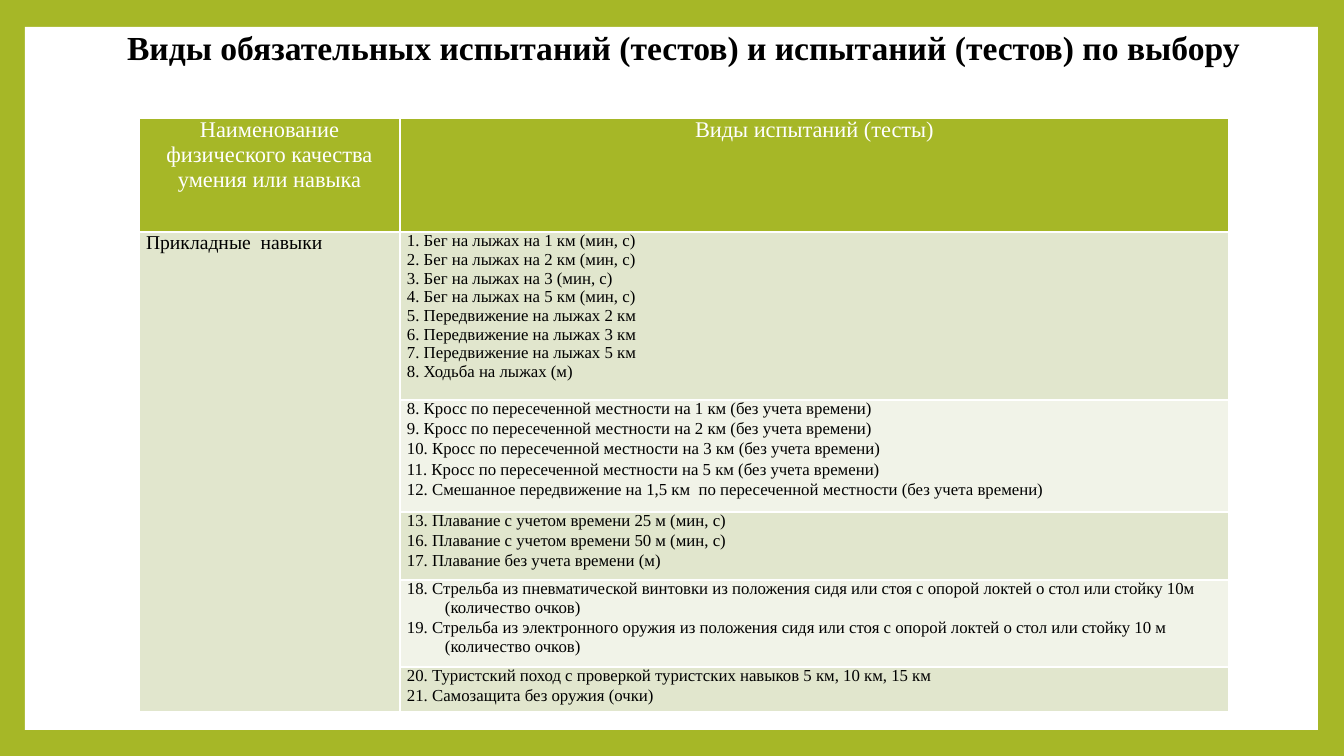
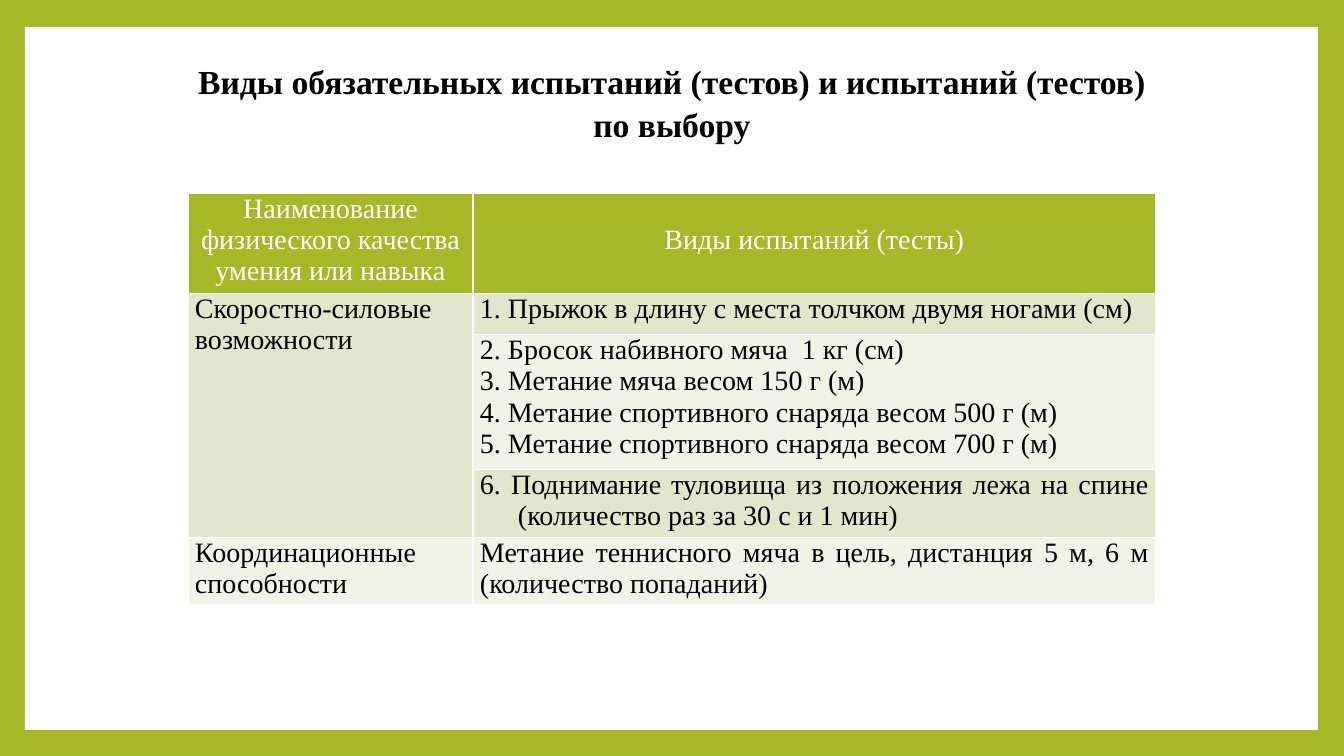
from dataclasses import dataclass

from lxml.etree import SubElement as Sub
from pptx import Presentation
from pptx.dml.color import RGBColor as Rgb
from pptx.enum.shapes import MSO_SHAPE as Kind
from pptx.enum.text import MSO_ANCHOR as Anchor, PP_ALIGN as Align
from pptx.oxml.ns import qn
from pptx.slide import Slide
from pptx.table import _Cell as Cell
from pptx.text.text import TextFrame as Frame
from pptx.util import Emu, Pt


@dataclass(frozen=True)
class Theme:
    font: str = "Times New Roman"
    green: str = "A6B727"
    white: str = "FFFFFF"
    black: str = "000000"
    bands: tuple[str, str] = ("E1E6CD", "F1F3E8")
    title: int = 24
    lead: float = 1.07
    rule: int = 1


@dataclass(frozen=True)
class Box:
    left: int
    top: int
    width: int
    height: int


@dataclass(frozen=True)
class Test:
    high: int
    lines: tuple[str, ...]
    gap: int = 0
    hang: int = 38


@dataclass(frozen=True)
class Group:
    name: str
    tests: tuple[Test, ...]


@dataclass(frozen=True)
class Sheet:
    title: Box
    left: int
    top: int
    cols: tuple[int, int]
    high: int
    drop: int
    head: int
    label: int
    body: int
    align: Align
    groups: tuple[Group, ...]


THEME = Theme()
PAGE = Box(0, 0, 1344, 756)
PANEL = Box(25, 27, 1293, 703)
PAD = 7
TITLE = "Виды обязательных испытаний (тестов) и испытаний (тестов) по выбору"
HEADS = ("Наименование физического качества умения или навыка", "Виды испытаний (тесты)")

SHEETS = (
    Sheet(
        Box(53, 21, 1261, 50), 139, 118, (261, 829), 114, 0, 16, 14, 12, Align.LEFT,
        (
            Group("Прикладные  навыки", (
                Test(168, (
                    "1. Бег на лыжах на 1 км (мин, с)",
                    "2. Бег на лыжах на 2 км (мин, с)",
                    "3. Бег на лыжах на 3 (мин, с)",
                    "4. Бег на лыжах на 5 км (мин, с)",
                    "5. Передвижение на лыжах 2 км",
                    "6. Передвижение на лыжах 3 км",
                    "7. Передвижение на лыжах 5 км",
                    "8. Ходьба на лыжах (м)",
                )),
                Test(112, (
                    "8. Кросс по пересеченной местности на 1 км (без учета времени)",
                    "9. Кросс по пересеченной местности на 2 км (без учета времени)",
                    "10. Кросс по пересеченной местности на 3 км (без учета времени)",
                    "11. Кросс по пересеченной местности на 5 км (без учета времени)",
                    "12. Смешанное передвижение на 1,5 км  по пересеченной местности "
                    "(без учета времени)",
                ), gap=1),
                Test(68, (
                    "13. Плавание с учетом времени 25 м (мин, с)",
                    "16. Плавание с учетом времени 50 м (мин, с)",
                    "17. Плавание без учета времени (м)",
                ), gap=1),
                Test(87, (
                    "18. Стрельба из пневматической винтовки из положения сидя или стоя "
                    "с опорой локтей о стол или стойку 10м (количество очков)",
                    "19. Стрельба из электронного оружия из положения сидя или стоя "
                    "с опорой локтей о стол или стойку 10 м (количество очков)",
                ), gap=1),
                Test(45, (
                    "20. Туристский поход с проверкой туристских навыков 5 км, 10 км, 15 км",
                    "21. Самозащита без оружия (очки)",
                ), gap=1),
            )),
        ),
    ),
    Sheet(
        Box(168, 55, 1008, 92), 188, 193, (285, 683), 100, 31, 20, 20, 20, Align.JUSTIFY,
        (
            Group("Скоростно-силовые возможности", (
                Test(41, ("1. Прыжок в длину с места толчком двумя ногами (см)",)),
                Test(135, (
                    "2. Бросок набивного мяча  1 кг (см)",
                    "3. Метание мяча весом 150 г (м)",
                    "4. Метание спортивного снаряда весом 500 г (м)",
                    "5. Метание спортивного снаряда весом 700 г (м)",
                )),
                Test(67, (
                    "6. Поднимание туловища из положения лежа на спине "
                    "(количество раз за 30 с и 1 мин)",
                )),
            )),
            Group("Координационные способности", (
                Test(67, (
                    "Метание теннисного мяча в цель, дистанция 5 м, 6 м "
                    "(количество попаданий)",
                ), hang=0),
            )),
        ),
    ),
)


def px(n: int) -> Emu:
    return Emu(round(n * 914400 / 100.8))


def rect(box: Box) -> tuple[Emu, ...]:
    return px(box.left), px(box.top), px(box.width), px(box.height)


def put(frame: Frame, *lines: str, size: int, color: str = THEME.black,
        bold: bool = False, align: Align = Align.LEFT, gap: int = 0,
        hang: int = 0, lead: float = 1.0) -> None:
    for i, line in enumerate(lines):
        para = frame.add_paragraph() if i else frame.paragraphs[0]
        para.alignment = align
        para.space_before = Pt(gap)
        para.line_spacing = lead
        if hang:
            props = para._p.get_or_add_pPr()
            props.set("marL", str(px(hang)))
            props.set("indent", str(-px(hang)))
        run = para.add_run()
        run.text = line
        font = run.font
        font.name, font.size, font.bold = THEME.font, Pt(size), bold
        font.color.rgb = Rgb.from_string(color)


def dress(cell: Cell, fill: str, drop: int = 0) -> None:
    cell.margin_left = cell.margin_right = px(PAD)
    cell.margin_top, cell.margin_bottom = px(drop), 0
    props = cell._tc.get_or_add_tcPr()
    for side in "LRTB":
        edge = Sub(props, qn(f"a:ln{side}"), w=str(Pt(THEME.rule)))
        Sub(Sub(edge, qn("a:solidFill")), qn("a:srgbClr"), val=THEME.white)
    cell.fill.solid()
    cell.fill.fore_color.rgb = Rgb.from_string(fill)


def panel(slide: Slide, box: Box) -> None:
    sheet = slide.shapes.add_shape(Kind.RECTANGLE, *rect(PANEL))
    sheet.shadow.inherit = False
    sheet.fill.solid()
    sheet.fill.fore_color.rgb = Rgb.from_string(THEME.white)
    sheet.line.fill.background()
    text = slide.shapes.add_textbox(*rect(box)).text_frame
    text.word_wrap = True
    text.vertical_anchor = Anchor.MIDDLE
    put(text, TITLE, size=THEME.title, bold=True, align=Align.CENTER, lead=THEME.lead)


def grid(slide: Slide, sheet: Sheet) -> None:
    highs = [sheet.high] + [t.high for g in sheet.groups for t in g.tests]
    box = Box(sheet.left, sheet.top, sum(sheet.cols), sum(highs))
    table = slide.shapes.add_table(len(highs), len(sheet.cols), *rect(box)).table
    table.first_row = table.horz_banding = False
    for col, wide in zip(table.columns, sheet.cols):
        col.width = px(wide)
    for row, high in zip(table.rows, highs):
        row.height = px(high)
    for i, (head, drop) in enumerate(zip(HEADS, (0, sheet.drop))):
        cell = table.cell(0, i)
        dress(cell, THEME.green, drop)
        put(cell.text_frame, head, size=sheet.head, color=THEME.white, align=Align.CENTER)
    at = 1
    for group in sheet.groups:
        first = at
        for test in group.tests:
            dress(table.cell(at, 0), THEME.bands[(first - 1) % 2])
            cell = table.cell(at, 1)
            dress(cell, THEME.bands[(at - 1) % 2])
            put(cell.text_frame, *test.lines, size=sheet.body, align=sheet.align,
                gap=test.gap, hang=test.hang)
            at += 1
        name = table.cell(first, 0)
        if at - first > 1:
            name.merge(table.cell(at - 1, 0))
        put(name.text_frame, group.name, size=sheet.label, align=Align.JUSTIFY)


def main() -> None:
    deck = Presentation()
    deck.slide_width, deck.slide_height = px(PAGE.width), px(PAGE.height)
    back = deck.slide_master.background.fill
    back.solid()
    back.fore_color.rgb = Rgb.from_string(THEME.green)
    for sheet in SHEETS:
        slide = deck.slides.add_slide(deck.slide_layouts[6])
        panel(slide, sheet.title)
        grid(slide, sheet)
    deck.save("out.pptx")


if __name__ == "__main__":
    main()
